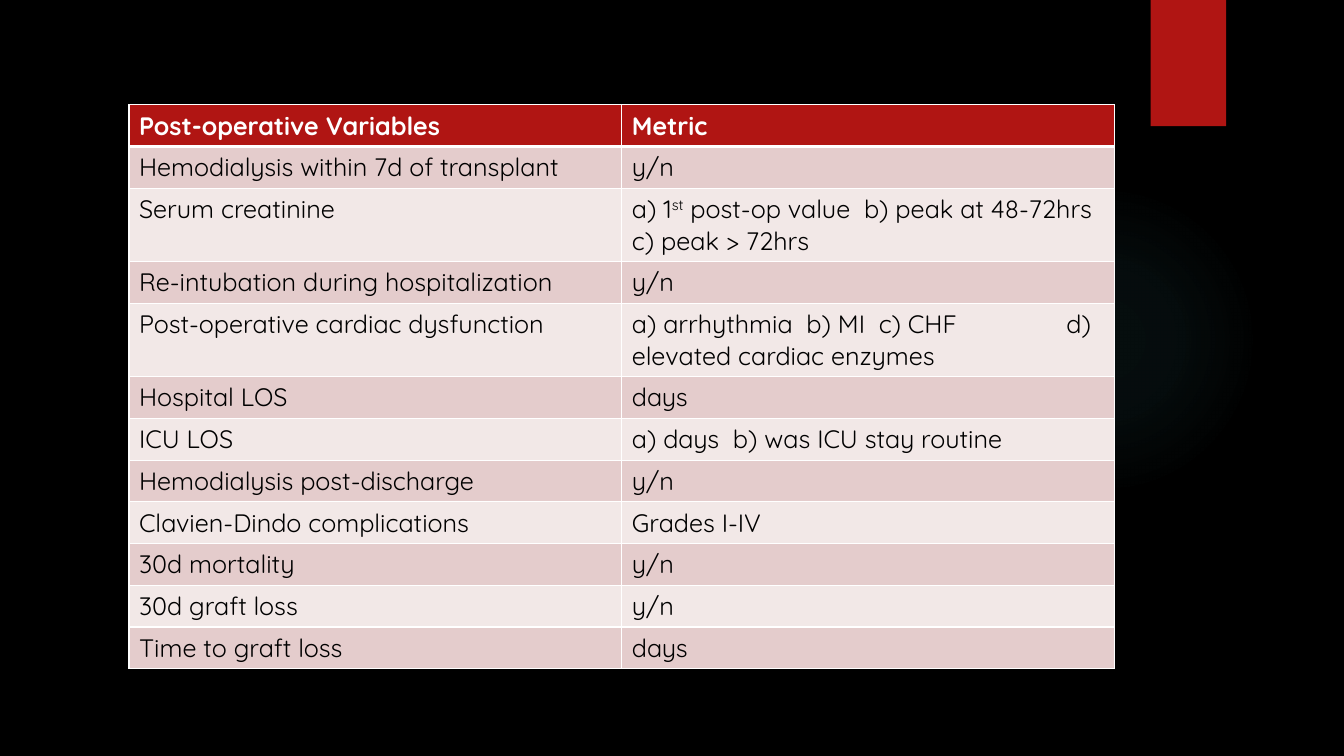
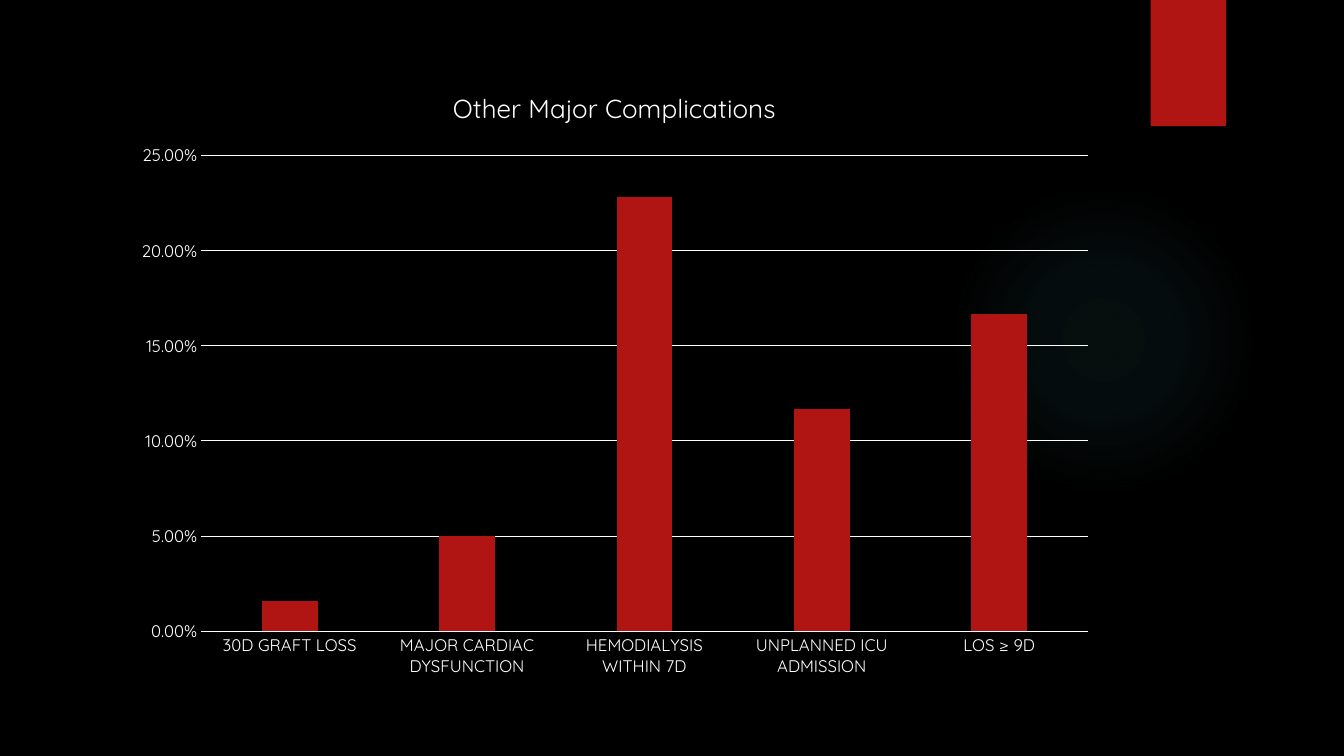
from lxml.etree import SubElement
from pptx import Presentation
from pptx.chart.data import CategoryChartData as ChartData
from pptx.dml.color import RGBColor as RGB
from pptx.enum.chart import XL_CHART_TYPE as Kind, XL_TICK_MARK as Tick
from pptx.enum.shapes import MSO_SHAPE as Shape
from pptx.oxml import parse_xml
from pptx.oxml.ns import nsdecls, qn
from pptx.util import Cm, Pt

BLACK = RGB(0x00, 0x00, 0x00)
WHITE = RGB(0xFF, 0xFF, 0xFF)
RED = RGB(0xB0, 0x15, 0x13)
ROSE = RGB(0xE4, 0xCC, 0xCC)
PALE = RGB(0xF2, 0xE8, 0xE7)
TEAL = RGB(0x50, 0xB9, 0xC1)
FONT = "Quicksand"
GLOW = [(0, 7), (36, 6), (69, 0)]  # stop and opacity, in percent


def write(par, text, size=18, color=BLACK, bold=False):
    """Add text to a paragraph; parts between carets are superscript."""
    for i, part in enumerate(text.split("^")):
        run = par.add_run()
        run.text = part
        font = run.font
        font.name, font.size, font.bold = FONT, Pt(size), bold
        font.color.rgb = color
        if i % 2:
            run._r.get_or_add_rPr().set("baseline", "30000")


def edge(cell, head, first):
    """Draw white borders, thick between the header and the first row."""
    for i, side in enumerate(["lnL", "lnR", "lnT", "lnB"]):
        thick = (head and side == "lnB") or (first and side == "lnT")
        line = parse_xml(
            f'<a:{side} {nsdecls("a")} w="{Pt(3 if thick else 1)}"><a:solidFill>'
            f'<a:srgbClr val="{WHITE}"/></a:solidFill></a:{side}>')
        cell._tc.get_or_add_tcPr().insert(i, line)


deck = Presentation()
deck.slide_width, deck.slide_height = Cm(33.87), Cm(19.05)

# Shared backdrop: black page, soft glow, red tab
pages = []
for _ in range(2):
    page = deck.slides.add_slide(deck.slide_layouts[6])
    page.background.fill.solid()
    page.background.fill.fore_color.rgb = BLACK

    glow = page.shapes.add_shape(Shape.OVAL, Cm(23.9), Cm(4.65), Cm(7.82), Cm(7.82))
    stops = "".join(
        f'<a:gs pos="{pos * 1000}"><a:srgbClr val="{TEAL}">'
        f'<a:alpha val="{alpha * 1000}"/></a:srgbClr></a:gs>' for pos, alpha in GLOW)
    props = glow._element.spPr
    props.insert(2, parse_xml(
        f'<a:gradFill {nsdecls("a")}><a:gsLst>{stops}</a:gsLst><a:path path="circle">'
        '<a:fillToRect l="50000" t="50000" r="50000" b="50000"/></a:path></a:gradFill>'))

    tab = page.shapes.add_shape(Shape.RECTANGLE, Cm(29), 0, Cm(1.9), Cm(3.18))
    tab.fill.solid()
    tab.fill.fore_color.rgb = RED
    for shape in (glow, tab):
        shape.line.fill.background()
        shape.shadow.inherit = False
    pages.append(page)

# Slide 1: table of variables
ROWS = [
    ("Post-operative Variables", "Metric"),
    ("Hemodialysis within 7d of transplant", "y/n"),
    ("Serum creatinine", "a) 1^st^ post-op value  b) peak at 48-72hrs c) peak > 72hrs"),
    ("Re-intubation during hospitalization", "y/n"),
    ("Post-operative cardiac dysfunction",
     "a) arrhythmia  b) MI  c) CHF\td) elevated cardiac enzymes"),
    ("Hospital LOS", "days"),
    ("ICU LOS", "a) days  b) was ICU stay routine"),
    ("Hemodialysis post-discharge", "y/n"),
    ("Clavien-Dindo complications", "Grades I-IV"),
    ("30d mortality", "y/n"),
    ("30d graft loss", "y/n"),
    ("Time to graft loss", "days"),
]
TALL = (2, 4)  # rows with two lines of text
highs = [Cm(1.85 if i in TALL else 1.05) for i in range(len(ROWS))]
table = pages[0].shapes.add_table(
    len(ROWS), 2, Cm(3.25), Cm(2.64), Cm(24.84), sum(highs)).table
for col in table.columns:
    col.width = Cm(12.42)
for r, row in enumerate(ROWS):
    table.rows[r].height = highs[r]
    head = r == 0
    for c, text in enumerate(row):
        cell = table.cell(r, c)
        cell.fill.solid()
        cell.fill.fore_color.rgb = RED if head else ROSE if r % 2 else PALE
        edge(cell, head, r == 1)
        par = cell.text_frame.paragraphs[0]
        if "\t" in text:
            tabs = SubElement(par._p.get_or_add_pPr(), qn("a:tabLst"))
            SubElement(tabs, qn("a:tab"), pos=str(Cm(10.95)), algn="l")
        write(par, text, color=WHITE if head else BLACK, bold=head)

# Slide 2: chart of complications
TITLE = "Other Major Complications"
RATES = {
    "30D GRAFT LOSS": 0.016,
    "MAJOR CARDIAC DYSFUNCTION": 0.05,
    "HEMODIALYSIS WITHIN 7D": 0.228,
    "UNPLANNED ICU ADMISSION": 0.117,
    "LOS ≥ 9D": 0.167,
}
data = ChartData(number_format="0.00%")
data.categories = list(RATES)
data.add_series(TITLE, list(RATES.values()))
chart = pages[1].shapes.add_chart(
    Kind.COLUMN_CLUSTERED, Cm(3.07), Cm(1.68), Cm(24.84), Cm(15.7), data).chart
chart.has_legend = False
chart.font.name, chart.font.size = FONT, Pt(12)
chart.font.color.rgb = WHITE
chart.has_title = True
write(chart.chart_title.text_frame.paragraphs[0], TITLE, size=18.6, color=WHITE)
chart.chart_title.include_in_layout = False

plot = chart.plots[0]
plot.gap_width, plot.overlap = 219, -27
plot.vary_by_categories = False
bars = plot.series[0].format.fill
bars.solid()
bars.fore_color.rgb = RED

cats, vals = chart.category_axis, chart.value_axis
for axis in (cats, vals):
    axis.major_tick_mark = axis.minor_tick_mark = Tick.NONE
vals.minimum_scale, vals.maximum_scale, vals.major_unit = 0, 0.25, 0.05
vals.tick_labels.number_format = "0.00%"
vals.tick_labels.number_format_is_linked = False
vals.format.line.fill.background()
for line in (cats.format.line, vals.major_gridlines.format.line):
    line.color.rgb = WHITE
    line.width = Pt(0.75)

deck.save("out.pptx")
